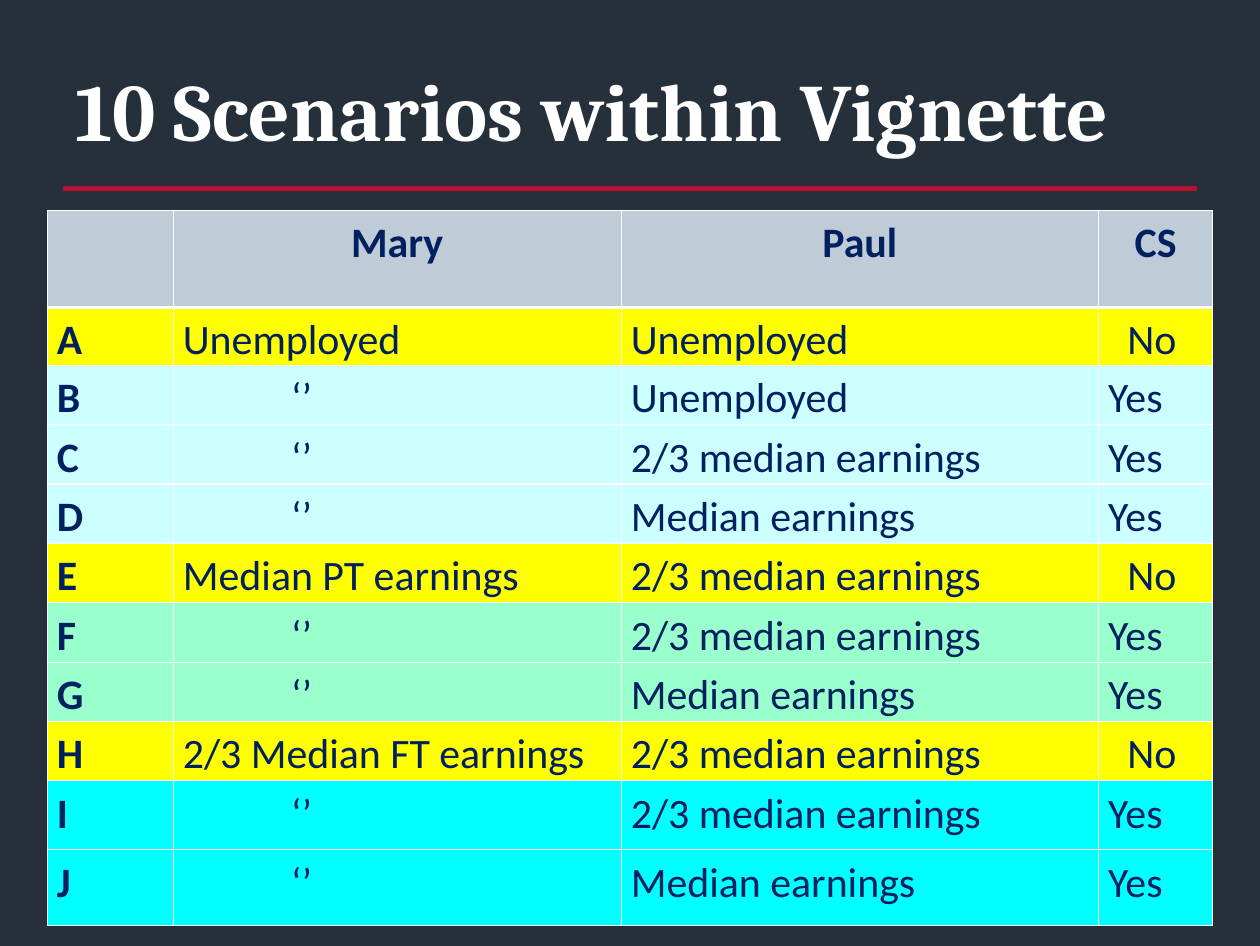
from lxml import etree
from pptx import Presentation, util as u
from pptx.dml.color import RGBColor
from pptx.enum import shapes, text
from pptx.oxml import ns

SLATE = RGBColor(0x25, 0x30, 0x3B)
CRIMSON = RGBColor(0xB7, 0x12, 0x34)
WHITE = RGBColor(0xFF, 0xFF, 0xFF)
NAVY = RGBColor(0x00, 0x20, 0x60)
HEADER_GREY = RGBColor(0xBF, 0xCB, 0xD7)
YELLOW = RGBColor(0xFF, 0xFF, 0x00)
PALE_CYAN = RGBColor(0xCC, 0xFF, 0xFF)
MINT = RGBColor(0x99, 0xFF, 0xCC)
CYAN = RGBColor(0x00, 0xFF, 0xFF)

DITTO = "‘’"
INDENTS = {DITTO: 3.1, "No": 0.55}
COLUMN_WIDTHS = [3.61, 12.83, 13.67, 3.28]
ROW_HEIGHTS = [2.79, 1.65] + [1.7] * 7 + [1.98, 2.18]

scenarios = [
    (HEADER_GREY, "", "Mary", "Paul", "CS"),
    (YELLOW, "A", "Unemployed", "Unemployed", "No"),
    (PALE_CYAN, "B", DITTO, "Unemployed", "Yes"),
    (PALE_CYAN, "C", DITTO, "2/3 median earnings", "Yes"),
    (PALE_CYAN, "D", DITTO, "Median earnings", "Yes"),
    (YELLOW, "E", "Median PT earnings", "2/3 median earnings", "No"),
    (MINT, "F", DITTO, "2/3 median earnings", "Yes"),
    (MINT, "G", DITTO, "Median earnings", "Yes"),
    (YELLOW, "H", "2/3 Median FT earnings", "2/3 median earnings", "No"),
    (CYAN, "I", DITTO, "2/3 median earnings", "Yes"),
    (CYAN, "J", DITTO, "Median earnings", "Yes"),
]


def set_font(font, color, **values):
    for key, value in values.items():
        setattr(font, key, value)
    font.color.rgb = color


def add_border(cell, side, points):
    properties = cell._tc.get_or_add_tcPr()
    border = etree.SubElement(properties, ns.qn(f"a:ln{side}"), w=str(u.Pt(points)))
    fill = etree.SubElement(border, ns.qn("a:solidFill"))
    etree.SubElement(fill, ns.qn("a:srgbClr"), val=str(WHITE))


deck = Presentation()
deck.slide_width, deck.slide_height = u.Cm(36.09), u.Cm(27.1)
slide = deck.slides.add_slide(deck.slide_layouts[6])
slide.background.fill.solid()
slide.background.fill.fore_color.rgb = SLATE

rule = slide.shapes.add_connector(
    shapes.MSO_CONNECTOR.STRAIGHT, u.Cm(1.8), u.Cm(5.41), u.Cm(34.29), u.Cm(5.41))
rule.line.color.rgb = CRIMSON
rule.line.width = u.Pt(4)
etree.SubElement(rule._element.spPr, ns.qn("a:effectLst"))

heading = slide.shapes.add_textbox(u.Cm(1.8), u.Cm(1.09), u.Cm(32.49), u.Cm(4.04)).text_frame
heading_format = {
    "word_wrap": True, "vertical_anchor": text.MSO_ANCHOR.MIDDLE,
    "margin_left": u.Cm(0.36), "margin_right": u.Cm(0.36),
    "margin_top": u.Cm(0.18), "margin_bottom": u.Cm(0.18),
}
for key, value in heading_format.items():
    setattr(heading, key, value)
heading.text = "10 Scenarios within Vignette"
set_font(heading.paragraphs[0].font, WHITE, name="Cambria", size=u.Pt(66), bold=True)

grid = slide.shapes.add_table(
    len(ROW_HEIGHTS), len(COLUMN_WIDTHS), u.Cm(1.35), u.Cm(6.02),
    u.Cm(sum(COLUMN_WIDTHS)), u.Cm(sum(ROW_HEIGHTS))).table
grid.first_row = grid.horz_banding = False
for column, width in zip(grid.columns, COLUMN_WIDTHS):
    column.width = u.Cm(width)
for row, height in zip(grid.rows, ROW_HEIGHTS):
    row.height = u.Cm(height)

for row_index, (band, *entries) in enumerate(scenarios):
    is_header = row_index == 0
    for column_index, entry in enumerate(entries):
        cell = grid.cell(row_index, column_index)
        cell.margin_left = u.Cm(0.28 + INDENTS.get(entry, 0))
        cell.margin_right = u.Cm(0.28)
        cell.margin_top = cell.margin_bottom = 0
        for side in "LRTB":
            under_header = (row_index, side) in [(0, "B"), (1, "T")]
            add_border(cell, side, 3 if under_header else 1)
        cell.fill.solid()
        cell.fill.fore_color.rgb = band
        cell.text = entry
        paragraph = cell.text_frame.paragraphs[0]
        paragraph.line_spacing = 1.15
        paragraph.alignment = text.PP_ALIGN.CENTER if is_header else text.PP_ALIGN.LEFT
        set_font(paragraph.font, NAVY, name="Calibri", size=u.Pt(34),
                 bold=is_header or column_index == 0)

deck.save("out.pptx")
